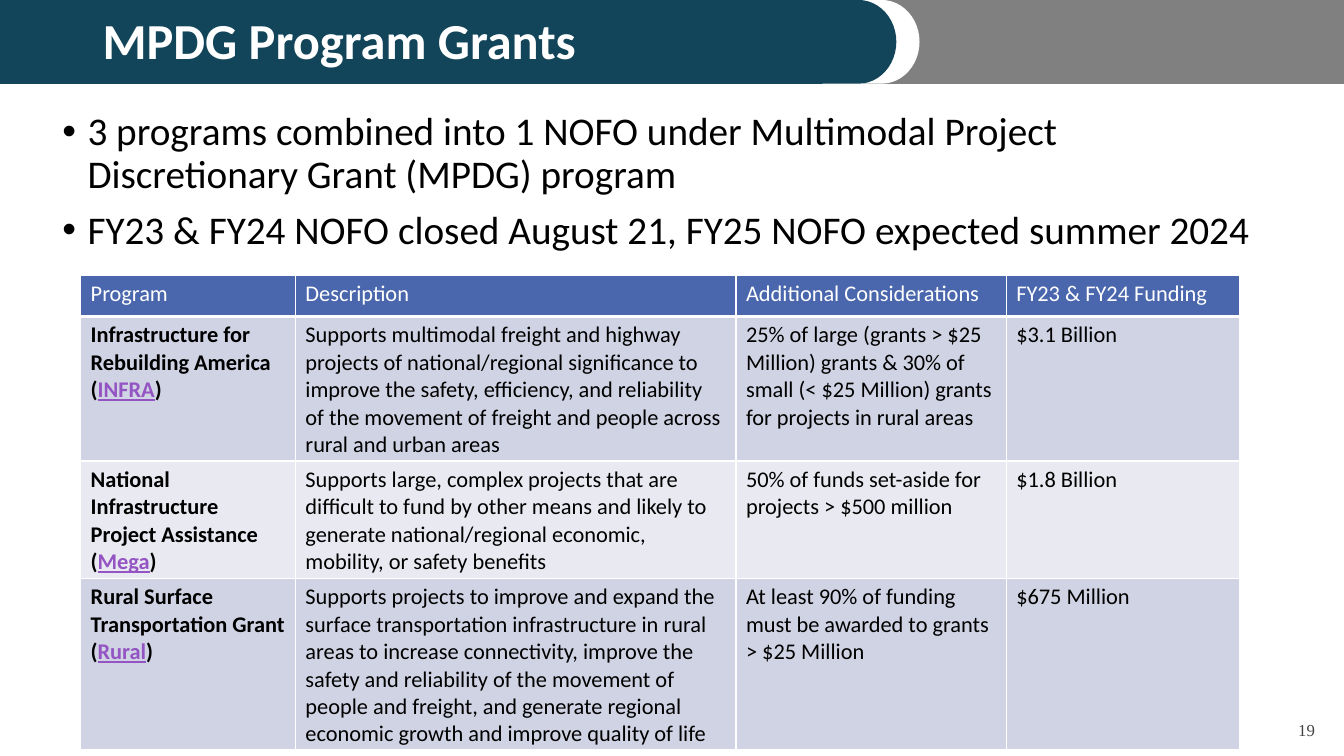
from typing import NamedTuple

from lxml import etree
from pptx import Presentation
from pptx import util as u
from pptx.dml.color import RGBColor
from pptx.enum import shapes, text
from pptx.oxml import ns

PX = 9144  # EMU in one px, 100 px to the inch

WHITE = RGBColor(0xFF, 0xFF, 0xFF)
BLACK = RGBColor(0, 0, 0)
GRAY = RGBColor(0x80, 0x80, 0x80)
TEAL = RGBColor(0x12, 0x45, 0x59)
BLUE = RGBColor(0x4A, 0x66, 0xAC)
BANDS = (RGBColor(0xD0, 0xD3, 0xE3), RGBColor(0xE9, 0xEA, 0xF1))
PURPLE = RGBColor(0x94, 0x54, 0xC3)
SLATE = RGBColor(0x43, 0x43, 0x43)
RECT = shapes.MSO_SHAPE.RECTANGLE
DELAY = shapes.MSO_SHAPE.FLOWCHART_DELAY


class Box(NamedTuple):
    left: int
    top: int
    width: int
    height: int

    def emu(self) -> list[int]:
        return [side * PX for side in self]


class Block(NamedTuple):
    kind: int
    left: int
    width: int
    color: RGBColor


class Grant(NamedTuple):
    name: str
    tag: str
    about: str
    terms: str
    funds: str


BANNER = (
    Block(RECT, 857, 476, GRAY),
    Block(DELAY, 838, 73, WHITE),
    Block(DELAY, 815, 73, TEAL),
    Block(RECT, 0, 815, TEAL),
)
POINTS = (
    "3 programs combined into 1 NOFO under Multimodal Project Discretionary Grant (MPDG) program",
    "FY23 & FY24 NOFO closed August 21, FY25 NOFO expected summer 2024",
)
HEADS = ("Program", "Description", "Additional Considerations", "FY23 & FY24 Funding")
WIDTHS = (213, 437, 268, 232)
ROW = 41
GRANTS = (
    Grant(
        "Infrastructure for Rebuilding America", "INFRA",
        "Supports multimodal freight and highway projects of national/regional significance "
        "to improve the safety, efficiency, and reliability of the movement of freight and "
        "people across rural and urban areas",
        "25% of large (grants > $25 Million) grants & 30% of small (< $25 Million) grants "
        "for projects in rural areas",
        "$3.1 Billion",
    ),
    Grant(
        "National Infrastructure Project Assistance", "Mega",
        "Supports large, complex projects that are difficult to fund by other means and "
        "likely to generate national/regional economic, mobility, or safety benefits",
        "50% of funds set-aside for projects > $500 million",
        "$1.8 Billion",
    ),
    Grant(
        "Rural Surface Transportation Grant", "Rural",
        "Supports projects to improve and expand the surface transportation infrastructure "
        "in rural areas to increase connectivity, improve the safety and reliability of the "
        "movement of people and freight, and generate regional economic growth and "
        "improve quality of life",
        "At least 90% of funding must be awarded to grants > $25 Million",
        "$675 Million",
    ),
)


def style(font, size: int, color: RGBColor, bold: bool = False, face: str = "Calibri") -> None:
    font.name, font.size, font.bold = face, u.Pt(size), bold
    font.color.rgb = color


def add_block(slide, block: Block) -> None:
    box = Box(block.left, 1, block.width, 81)
    shape = slide.shapes.add_shape(block.kind, *box.emu())
    shape.shadow.inherit = False
    shape.fill.solid()
    shape.fill.fore_color.rgb = block.color
    shape.line.color.rgb = block.color
    shape.line.width = u.Pt(1.5)


def add_frame(slide, box: Box, words: str, anchor=text.MSO_ANCHOR.MIDDLE):
    frame = slide.shapes.add_textbox(*box.emu()).text_frame
    frame.word_wrap = True
    frame.vertical_anchor = anchor
    frame.text = words
    return frame


def add_bullet(para) -> None:
    props = para._p.get_or_add_pPr()
    props.set("marL", str(25 * PX))
    props.set("indent", str(-25 * PX))
    etree.SubElement(props, ns.qn("a:buFont")).set("typeface", "Arial")
    etree.SubElement(props, ns.qn("a:buChar")).set("char", "•")


def add_points(slide) -> None:
    box = Box(52, 106, 1211, 539)
    frame = add_frame(slide, box, "\n".join(POINTS), text.MSO_ANCHOR.TOP)
    for spot, para in enumerate(frame.paragraphs):
        add_bullet(para)
        para.line_spacing = 0.9
        if spot:
            para.space_before = u.Pt(10)
        style(para.runs[0].font, 28, BLACK)


def set_edges(cell) -> None:
    """Draw white cell borders, thicker at the bottom."""
    props = cell._tc.get_or_add_tcPr()
    for side, width in zip("LRTB", (1, 1, 1, 3)):
        line = etree.SubElement(props, ns.qn(f"a:ln{side}"), w=str(u.Pt(width)))
        fill = etree.SubElement(line, ns.qn("a:solidFill"))
        etree.SubElement(fill, ns.qn("a:srgbClr"), val=str(WHITE))


def fill_cell(cell, words: str, ink: RGBColor, back: RGBColor) -> None:
    cell.fill.solid()
    cell.fill.fore_color.rgb = back
    cell.text = words
    style(cell.text_frame.paragraphs[0].runs[0].font, 16, ink)


def fill_name(cell, grant: Grant, back: RGBColor) -> None:
    """Write the program in bold, with its tag underlined in parentheses."""
    fill_cell(cell, f"{grant.name} (", BLACK, back)
    para = cell.text_frame.paragraphs[0]
    for words in (grant.tag, ")"):
        para.add_run().text = words
    for run, ink in zip(para.runs, (BLACK, PURPLE, BLACK)):
        style(run.font, 16, ink, bold=True)
        run.font.underline = ink == PURPLE


def add_grants(slide) -> None:
    count = len(GRANTS) + 1
    box = Box(80, 273, sum(WIDTHS), ROW * count)
    table = slide.shapes.add_table(count, len(HEADS), *box.emu()).table
    for col, width in zip(table.columns, WIDTHS):
        col.width = width * PX
    for col, head in enumerate(HEADS):
        cell = table.cell(0, col)
        set_edges(cell)
        fill_cell(cell, head, WHITE, BLUE)
    for row, grant in enumerate(GRANTS, 1):
        back = BANDS[(row - 1) % 2]
        fill_name(table.cell(row, 0), grant, back)
        for col, words in enumerate(grant[2:], 1):
            fill_cell(table.cell(row, col), words, BLACK, back)


def main() -> None:
    deck = Presentation()
    deck.slide_width, deck.slide_height = 1333 * PX, 750 * PX
    slide = deck.slides.add_slide(deck.slide_layouts[6])
    for block in BANNER:
        add_block(slide, block)

    title = add_frame(slide, Box(92, 16, 746, 53), "MPDG Program Grants").paragraphs[0]
    title.line_spacing = 0.9
    style(title.runs[0].font, 36, WHITE, bold=True)

    add_points(slide)

    page = add_frame(slide, Box(1014, 704, 300, 40), "19").paragraphs[0]
    page.alignment = text.PP_ALIGN.RIGHT
    style(page.runs[0].font, 12, SLATE, face="Times New Roman")

    add_grants(slide)
    deck.save("out.pptx")


if __name__ == "__main__":
    main()
